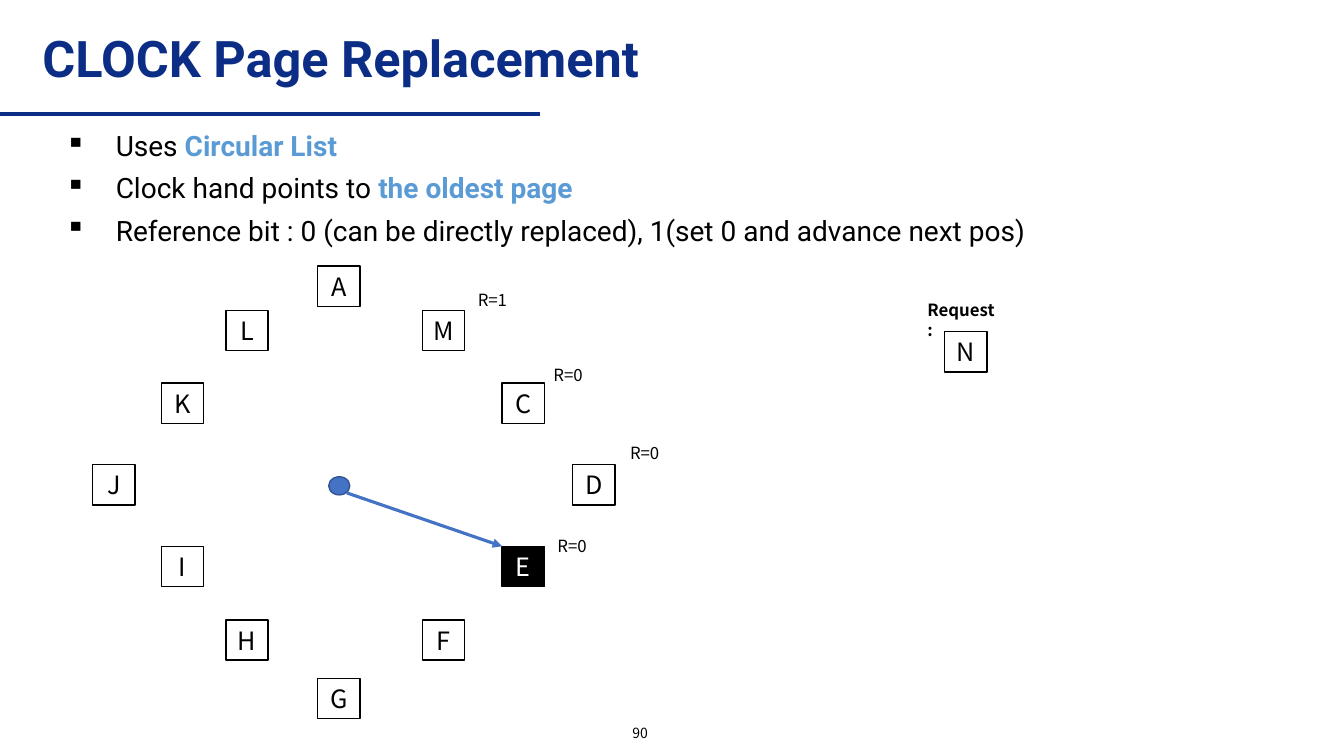
from lxml import etree
from pptx import Presentation
from pptx.dml.color import RGBColor
from pptx.enum.shapes import MSO_CONNECTOR, MSO_SHAPE
from pptx.enum.text import MSO_ANCHOR, MSO_AUTO_SIZE, PP_ALIGN
from pptx.oxml.ns import qn
from pptx.util import Inches, Pt

LEFT, CENTER = PP_ALIGN.LEFT, PP_ALIGN.CENTER
TOP, MIDDLE = MSO_ANCHOR.TOP, MSO_ANCHOR.MIDDLE
RECT, OVAL = MSO_SHAPE.RECTANGLE, MSO_SHAPE.OVAL
STRAIGHT = MSO_CONNECTOR.STRAIGHT
NO_AUTOFIT = MSO_AUTO_SIZE.NONE

COLORS = {"navy": "0B2D86", "sky": "5B9BD5", "hand": "4472C4",
          "pivot": "325491", "black": "000000", "white": "FFFFFF"}
HEADING_FONT, LABEL_FONT = "Roboto", "Noto Sans CJK KR"


def rgb(name):
    return RGBColor.from_string(COLORS[name])


def write(frame, paragraphs, size=12, font=LABEL_FONT, color="black", bold=False,
          accent="sky", align=LEFT, anchor=TOP, wrap=True, margin=None,
          bullet=None, indent=0.5, before=0, spacing=None):
    """Each paragraph is a list of runs; every second run is a bold accent."""
    frame.auto_size = NO_AUTOFIT
    frame.word_wrap = wrap
    frame.vertical_anchor = anchor
    if margin is not None:
        frame.margin_left = frame.margin_right = Inches(margin)
        frame.margin_top = frame.margin_bottom = Inches(margin)
    for index, runs in enumerate(paragraphs):
        paragraph = frame.add_paragraph() if index else frame.paragraphs[0]
        paragraph.alignment = align
        paragraph.space_before = Pt(before if index else 0)
        if spacing:
            paragraph.line_spacing = spacing
        if bullet:
            properties = paragraph._p.get_or_add_pPr()
            properties.set("marL", str(Inches(indent)))
            properties.set("indent", str(-Inches(indent)))
            etree.SubElement(properties, qn("a:buChar")).set("char", bullet)
        for position, text in enumerate(runs):
            run = paragraph.add_run()
            run.text = text
            run.font.size, run.font.name = Pt(size), font
            run.font.bold = bold or position % 2 == 1
            run.font.color.rgb = rgb(accent if position % 2 else color)


prs = Presentation()
prs.slide_width, prs.slide_height = Inches(13.33), Inches(7.5)
slide = prs.slides.add_slide(prs.slide_layouts[5])
shapes = slide.shapes

# Title
title = shapes.title
title.left, title.top = Inches(0.32), Inches(0.24)
title.width, title.height = Inches(9.17), Inches(0.74)
write(title.text_frame, [["CLOCK Page Replacement"]], size=36, font=HEADING_FONT,
      color="navy", bold=True, anchor=MIDDLE, spacing=0.9)

# Key points
points = shapes.add_textbox(Inches(0.55), Inches(1.23), Inches(12.14), Inches(1.81))
write(points.text_frame, [
    ["Uses ", "Circular List"],
    ["Clock hand points to ", "the oldest page"],
    ["Reference bit : 0 (can be directly replaced), 1(set 0 and advance next pos)"],
], size=20, font=HEADING_FONT, bullet="▪", before=6)

# Pages around the clock, clockwise from the top, then the requested page
columns = [0.92, 1.6, 2.24, 3.15, 4.19, 4.98, 5.68]
rows = [2.64, 3.08, 3.8, 4.61, 5.42, 6.15, 6.73]
pages = [(letter, columns[6 - abs((hour + 3) % 12 - 6)], rows[6 - abs(hour - 6)])
         for hour, letter in enumerate("AMCDEFGHIJKL")]
oldest = "E"
for letter, x, y in pages + [("N", 9.37, 3.29)]:
    fill, ink = ("black", "white") if letter == oldest else ("white", "black")
    page = shapes.add_shape(RECT, Inches(x), Inches(y), Inches(0.42), Inches(0.4))
    page.shadow.inherit = False
    page.fill.solid()
    page.fill.fore_color.rgb = rgb(fill)
    page.line.color.rgb = rgb("black")
    page.line.width = Pt(1)
    write(page.text_frame, [[letter]], size=18, color=ink, align=CENTER,
          anchor=MIDDLE, margin=0)

# Clock pivot
pivot = shapes.add_shape(OVAL, Inches(3.26), Inches(4.73), Inches(0.21), Inches(0.18))
pivot.shadow.inherit = False
pivot.fill.solid()
pivot.fill.fore_color.rgb = rgb("hand")
pivot.line.color.rgb = rgb("pivot")
pivot.line.width = Pt(1)

# Title rule and clock hand, which ends at the corner of the oldest page
for x1, y1, x2, y2, color, width, arrow in [
    (0, 1.13, 5.36, 1.13, "navy", 3, False),
    (3.44, 4.89, columns[5], rows[4], "hand", 2.25, True),
]:
    stroke = shapes.add_connector(STRAIGHT, Inches(x1), Inches(y1), Inches(x2), Inches(y2))
    stroke.line.color.rgb = rgb(color)
    stroke.line.width = Pt(width)
    if arrow:
        etree.SubElement(stroke.line._get_or_add_ln(), qn("a:tailEnd")).set("type", "triangle")
    etree.SubElement(stroke._element.spPr, qn("a:effectLst"))

# Reference bits
for bit, x, y in [("R=1", 4.64, 2.83), ("R=0", 5.39, 3.57),
                  ("R=0", 6.15, 4.34), ("R=0", 5.43, 5.27)]:
    reference = shapes.add_textbox(Inches(x), Inches(y), Inches(0.52), Inches(0.3))
    write(reference.text_frame, [[bit]], wrap=False)

# Request label
request = shapes.add_textbox(Inches(9.1), Inches(2.92), Inches(0.9), Inches(0.3))
write(request.text_frame, [["Request :"]], bold=True)

# Page number
number = shapes.add_textbox(Inches(4.85), Inches(7.11), Inches(3), Inches(0.32))
write(number.text_frame, [["90"]], size=10, align=CENTER, anchor=MIDDLE)

prs.save("out.pptx")
